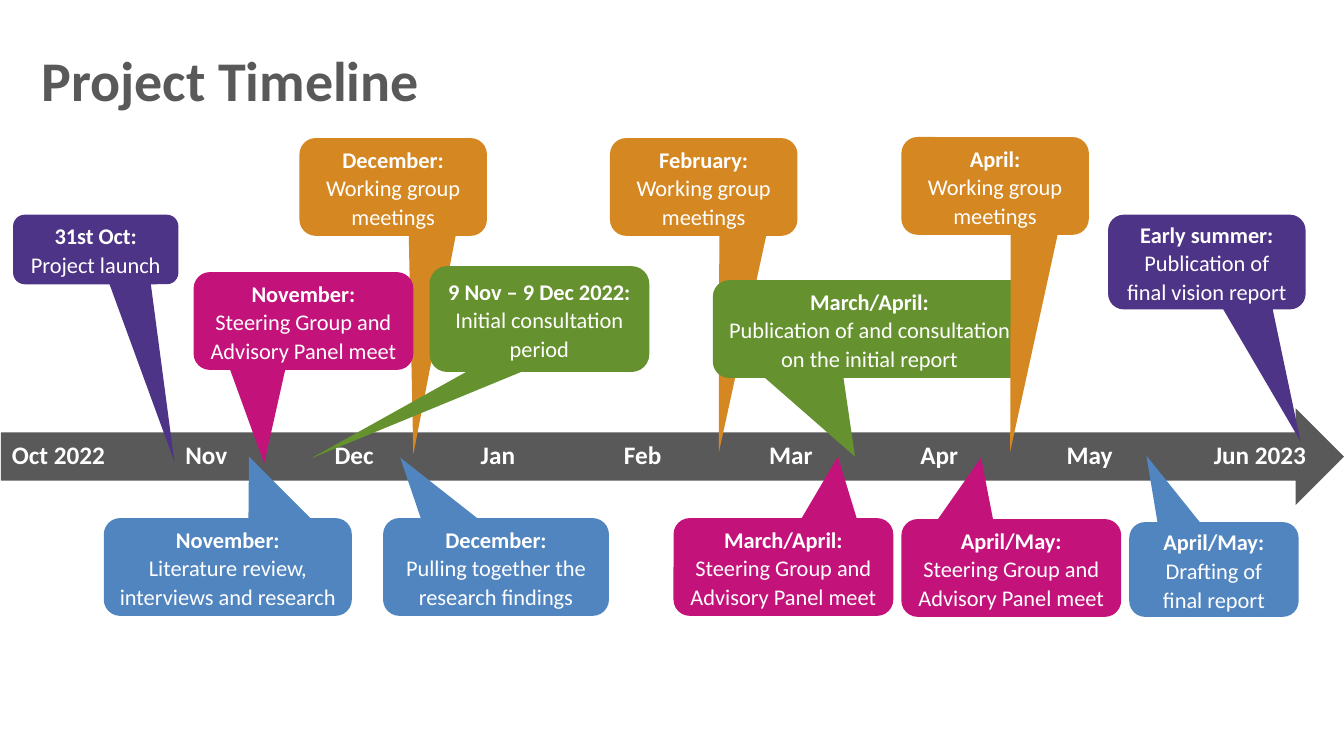
"""Build the project timeline slide."""
from lxml.etree import SubElement
from pptx import Presentation
from pptx.dml.color import RGBColor
from pptx.enum.shapes import MSO_SHAPE
from pptx.enum.text import MSO_ANCHOR, MSO_AUTO_SIZE, PP_ALIGN
from pptx.oxml.ns import qn
from pptx.util import Emu, Pt

GREY = RGBColor(0x59, 0x59, 0x59)
WHITE = RGBColor(0xFF, 0xFF, 0xFF)
ORANGE = RGBColor(0xD5, 0x87, 0x21)
PURPLE = RGBColor(0x4E, 0x34, 0x87)
PINK = RGBColor(0xC3, 0x13, 0x7B)
GREEN = RGBColor(0x65, 0x92, 0x2E)
BLUE = RGBColor(0x51, 0x85, 0xC0)

MONTHS = [
    ("Oct 2022", 0), ("Nov", 172), ("Dec", 320), ("Jan", 465), ("Feb", 607),
    ("Mar", 751), ("Apr", 901), ("May", 1046), ("Jun 2023", 1192),
]

WORKING = "Working group meetings"
STEERING = "Steering Group and Advisory Panel meet"

EVENTS = [
    ("February:", WORKING, ORANGE, (605, 137, 186, 97), (713, 449)),
    ("December:", WORKING, ORANGE, (297, 137, 186, 97), (410, 451)),
    ("31st Oct:", "Project launch", PURPLE, (13, 213, 164, 69), (173, 458)),
    ("November:", STEERING, PINK, (192, 270, 218, 97), (262, 460)),
    ("9 Nov – 9 Dec 2022:", "Initial consultation period", GREEN,
     (426, 264, 218, 105), (308, 455)),
    ("March/April:", "Publication of and consultation on the initial report", GREEN,
     (707, 278, 311, 97), (848, 453)),
    ("Early summer:", "Publication of final vision report", PURPLE,
     (1099, 213, 196, 94), (1290, 438)),
    ("November:", "Literature review, interviews and research", BLUE,
     (103, 514, 246, 97), (247, 453)),
    ("December:", "Pulling together the research findings", BLUE,
     (380, 514, 224, 97), (397, 454)),
    ("March/April:", STEERING, PINK, (668, 514, 218, 97), (831, 453)),
    ("April/May:", "Drafting of final report", BLUE, (1120, 518, 168, 94), (1137, 452)),
    ("April/May:", STEERING, PINK, (894, 515, 218, 97), (973, 454)),
    ("April:", WORKING, ORANGE, (894, 136, 186, 97), (1002, 448)),
]


class TimelinePage:
    """Holds the slide, its scale and its text style."""

    scale = 9144
    font_name = "Calibri"

    def __init__(self, deck):
        deck.slide_width, deck.slide_height = self.lengths(1333, 750)
        self.page = deck.slides.add_slide(deck.slide_layouts[5])

    def lengths(self, *pixels):
        return [Emu(pixel * self.scale) for pixel in pixels]

    def style(self, span, size, color, bold=True):
        span.font.name = self.font_name
        span.font.size = Pt(size)
        span.font.bold = bold
        span.font.color.rgb = color

    def title(self, text, bounds):
        box = self.page.shapes.title
        box.left, box.top, box.width, box.height = self.lengths(*bounds)
        frame = box.text_frame
        frame.text = text
        frame.auto_size = MSO_AUTO_SIZE.NONE
        frame.vertical_anchor = MSO_ANCHOR.TOP
        para = frame.paragraphs[0]
        para.alignment = PP_ALIGN.LEFT
        self.style(para.runs[0], 40, GREY)

    def shape(self, preset, bounds, color):
        box = self.page.shapes.add_shape(preset, *self.lengths(*bounds))
        box.shadow.inherit = False
        box.fill.solid()
        box.fill.fore_color.rgb = color
        box.line.fill.background()
        return box

    def months(self, labels, bounds):
        box = self.page.shapes.add_textbox(*self.lengths(*bounds))
        box.text_frame.word_wrap = True
        para = box.text_frame.paragraphs[0]
        para.text = "\t".join(name for name, _ in labels)
        stops = SubElement(para._p.get_or_add_pPr(), qn("a:tabLst"))
        for _, offset in labels[1:]:
            SubElement(stops, qn("a:tab"), pos=str(offset * self.scale), algn="l")
        self.style(para.runs[0], 18, WHITE)

    def callout(self, heading, detail, color, bounds, tip):
        box = self.shape(MSO_SHAPE.ROUNDED_RECTANGULAR_CALLOUT, bounds, color)
        left, top, width, height = bounds
        box.adjustments[0] = (tip[0] - left) / width - 0.5
        box.adjustments[1] = (tip[1] - top) / height - 0.5
        frame = box.text_frame
        frame.word_wrap = True
        frame.vertical_anchor = MSO_ANCHOR.MIDDLE
        para = frame.paragraphs[0]
        para.text = f"{heading}\v{detail}"
        para.alignment = PP_ALIGN.CENTER
        para.line_spacing = 1.07
        para.space_after = Pt(8)
        for span, bold in zip(para.runs, (True, False)):
            self.style(span, 16, WHITE, bold)
        SubElement(para._p.find(qn("a:br")), qn("a:rPr"), sz="1600")


def main():
    deck = Presentation()
    timeline = TimelinePage(deck)
    timeline.title("Project Timeline", (31, 40, 1302, 77))
    timeline.shape(MSO_SHAPE.RIGHT_ARROW, (1, 405, 1332, 96), GREY)
    timeline.months(MONTHS, (2, 431, 1323, 40))
    for event in EVENTS:
        timeline.callout(*event)
    deck.save("out.pptx")


if __name__ == "__main__":
    main()
